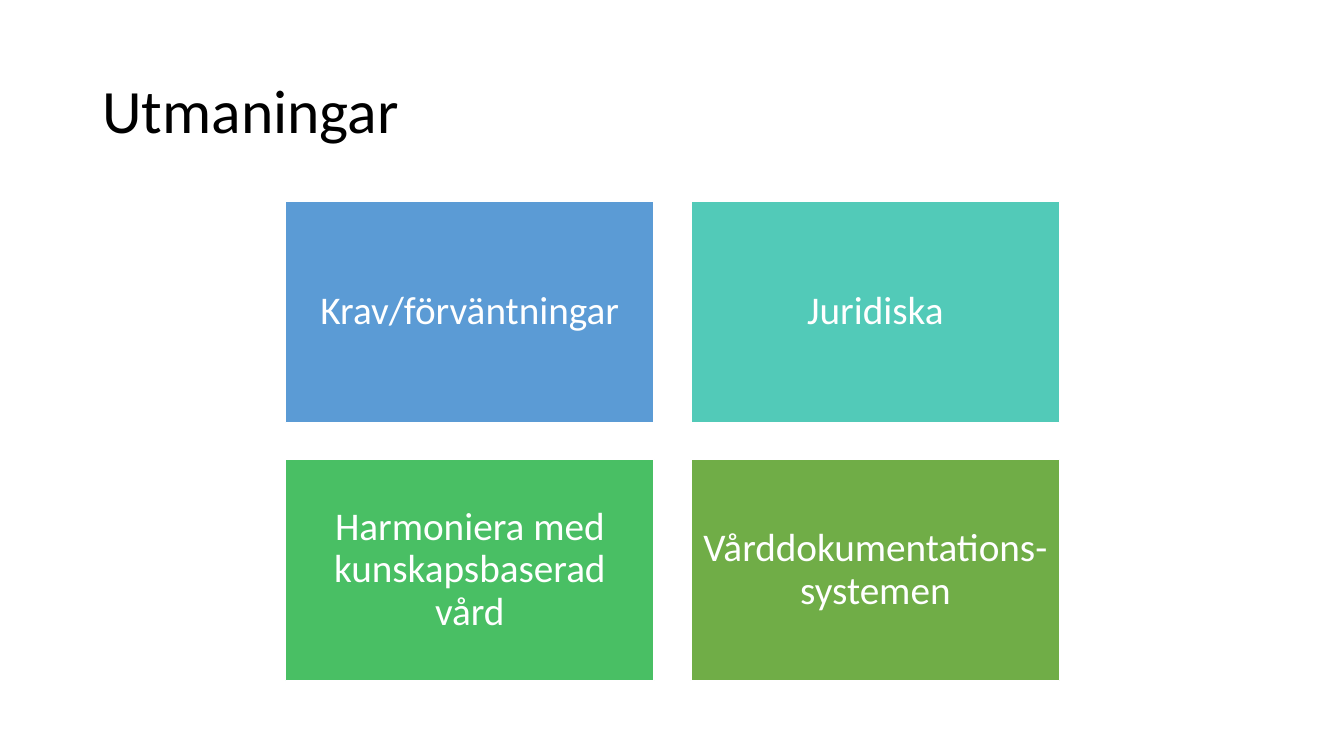
"""Build the slide "Utmaningar": a title above a two by two grid of coloured boxes."""
from pptx import Presentation
from pptx.dml.color import RGBColor
from pptx.enum.shapes import MSO_SHAPE as Shape
from pptx.enum.text import MSO_ANCHOR as Anchor, PP_ALIGN as Align
from pptx.util import Pt


def color(code):
    return RGBColor.from_string(code)


def write(frame, text, size, code, align):
    frame.word_wrap = True
    frame.vertical_anchor = Anchor.MIDDLE
    para = frame.paragraphs[0]
    para.text = text
    para.alignment = align
    para.line_spacing = 0.9
    para.font.name = "Calibri"
    para.font.size = Pt(size)
    para.font.color.rgb = color(code)


deck = Presentation()
deck.slide_width, deck.slide_height = Pt(960), Pt(540)
slide = deck.slides.add_slide(deck.slide_layouts[6])

title = slide.shapes.add_textbox(Pt(66), Pt(28.75), Pt(828), Pt(104.4))
write(title.text_frame, "Utmaningar", 44, "000000", Align.LEFT)

themes = [
    ("Krav/förväntningar", "5B9BD5"),
    ("Juridiska", "52CAB8"),
    ("Harmoniera med kunskapsbaserad vård", "49BF64"),
    ("Vårddokumentations-systemen", "70AD47"),
]
left, top, wide, high, gap = 203.9, 144, 263.4, 158, 26.3

for i, (text, fill) in enumerate(themes):
    row, col = divmod(i, 2)
    x = left + col * (wide + gap)
    y = top + row * (high + gap)
    box = slide.shapes.add_shape(Shape.RECTANGLE, Pt(x), Pt(y), Pt(wide), Pt(high))
    box.shadow.inherit = False
    box.fill.solid()
    box.fill.fore_color.rgb = color(fill)
    box.line.color.rgb = color("FFFFFF")
    box.line.width = Pt(1)
    frame = box.text_frame
    frame.margin_left = frame.margin_right = Pt(8.4)
    frame.margin_top = frame.margin_bottom = Pt(8.4)
    write(frame, text, 28, "FFFFFF", Align.CENTER)

deck.save("out.pptx")
